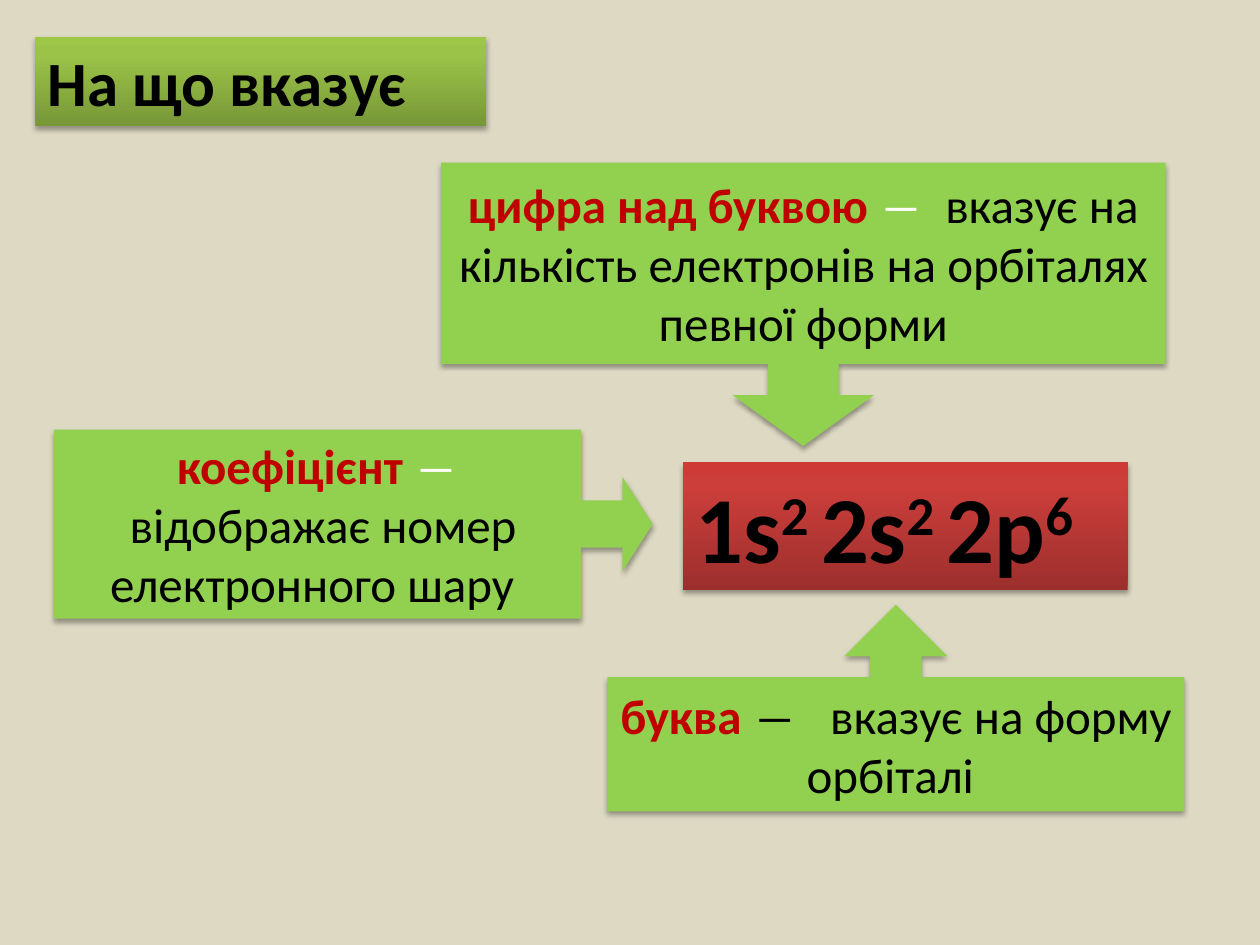
"""Build a slide explaining the parts of an electron configuration."""
from lxml import etree
from pptx import Presentation
from pptx.dml.color import RGBColor
from pptx.enum import shapes, text
from pptx.oxml.ns import qn
from pptx.util import Inches, Pt

BACKGROUND = RGBColor(0xDD, 0xD9, 0xC3)
GREEN = RGBColor(0x92, 0xD0, 0x50)
RED = RGBColor(0xC0, 0x00, 0x00)
BLACK = RGBColor(0x00, 0x00, 0x00)
WHITE = RGBColor(0xFF, 0xFF, 0xFF)
RED_STOPS = [
    (0, RGBColor(0x9C, 0x2F, 0x2D)),
    (80, RGBColor(0xCB, 0x3E, 0x3A)),
    (100, RGBColor(0xCE, 0x3B, 0x37)),
]
GREEN_STOPS = [
    (0, RGBColor(0x77, 0x97, 0x37)),
    (80, RGBColor(0x9B, 0xC3, 0x48)),
    (100, RGBColor(0x9D, 0xC7, 0x46)),
]
SHAPE = shapes.MSO_SHAPE


def add_color(parent, color):
    element = etree.SubElement(parent, qn("a:srgbClr"), val=str(color))
    return element


def add_shadow(shape):
    shape.shadow.inherit = False
    effects = shape._element.spPr.find(qn("a:effectLst"))
    shadow = etree.SubElement(
        effects, qn("a:outerShdw"), blurRad=str(Pt(3.1)), dist=str(Pt(1.8)),
        dir="5400000", rotWithShape="0")
    etree.SubElement(add_color(shadow, BLACK), qn("a:alpha"), val="35000")


def fill_gradient(shape, stops):
    shape.fill.gradient()
    shape.fill.gradient_angle = 90
    stop_list = shape._element.spPr.find(".//" + qn("a:gsLst"))
    for stop in list(stop_list):
        stop_list.remove(stop)
    for position, color in stops:
        stop = etree.SubElement(stop_list, qn("a:gs"), pos=str(position * 1000))
        add_color(stop, color)


def add_box(slide, kind, bounds):
    shape = slide.shapes.add_shape(kind, *map(Inches, bounds))
    shape.line.fill.background()
    add_shadow(shape)
    shape.text_frame.word_wrap = True
    return shape


def start_paragraph(shape, size, alignment):
    paragraph = shape.text_frame.paragraphs[0]
    paragraph.alignment = alignment
    paragraph.font.name = "Calibri"
    paragraph.font.size = Pt(size)
    return paragraph


def add_run(paragraph, words, color=BLACK, bold=False):
    run = paragraph.add_run()
    run.text = words
    run.font.color.rgb = color
    run.font.bold = bold
    return run


def add_label(slide, bounds, stops, size, parts, wrap=True):
    """Add a gradient label; every second part is superscript."""
    shape = add_box(slide, SHAPE.RECTANGLE, bounds)
    fill_gradient(shape, stops)
    shape.text_frame.word_wrap = wrap
    shape.text_frame.auto_size = text.MSO_AUTO_SIZE.SHAPE_TO_FIT_TEXT
    paragraph = start_paragraph(shape, size, text.PP_ALIGN.LEFT)
    for index, part in enumerate(parts):
        run = add_run(paragraph, part, bold=True)
        if index % 2:
            run.font._element.set("baseline", "30000")


def add_callout(slide, kind, bounds, term, pieces, adjustments=()):
    """Add an arrow callout; a piece of None is a line break."""
    shape = add_box(slide, kind, bounds)
    shape.fill.solid()
    shape.fill.fore_color.rgb = GREEN
    for index, value in enumerate(adjustments):
        shape.adjustments[index] = value
    paragraph = start_paragraph(shape, 28, text.PP_ALIGN.CENTER)
    add_run(paragraph, term, RED, bold=True)
    for piece in pieces:
        if piece is None:
            paragraph.add_line_break()
        else:
            add_run(paragraph, *piece)


def main():
    presentation = Presentation()
    presentation.slide_width = Inches(10)
    presentation.slide_height = Inches(7.5)
    slide = presentation.slides.add_slide(presentation.slide_layouts[6])
    slide.background.fill.solid()
    slide.background.fill.fore_color.rgb = BACKGROUND

    add_label(slide, (5.42, 3.67, 3.53, 1.01), RED_STOPS, 54,
              ["1s", "2 ", "2s", "2 ", "2р", "6"], wrap=False)
    add_callout(slide, SHAPE.UP_ARROW_CALLOUT, (4.82, 4.8, 4.58, 1.64),
                "буква ", [("―   вказує на форму орбіталі ",)])
    add_callout(slide, SHAPE.DOWN_ARROW_CALLOUT, (3.5, 1.29, 5.75, 2.25),
                "цифра над буквою ",
                [("―  ", WHITE),
                 ("вказує на кількість електронів на орбіталях певної форми",)],
                (0.25, 0.25, 0.18, 0.71))
    add_callout(slide, SHAPE.RIGHT_ARROW_CALLOUT, (0.43, 3.41, 4.75, 1.5),
                "коефіцієнт ",
                [("―", WHITE), None, (" ", WHITE),
                 ("відображає номер електронного шару ",)],
                (0.25, 0.25, 0.16, 0.88))
    add_label(slide, (0.28, 0.29, 3.58, 0.71), GREEN_STOPS, 36, ["На що вказує"])
    presentation.save("out.pptx")


if __name__ == "__main__":
    main()
